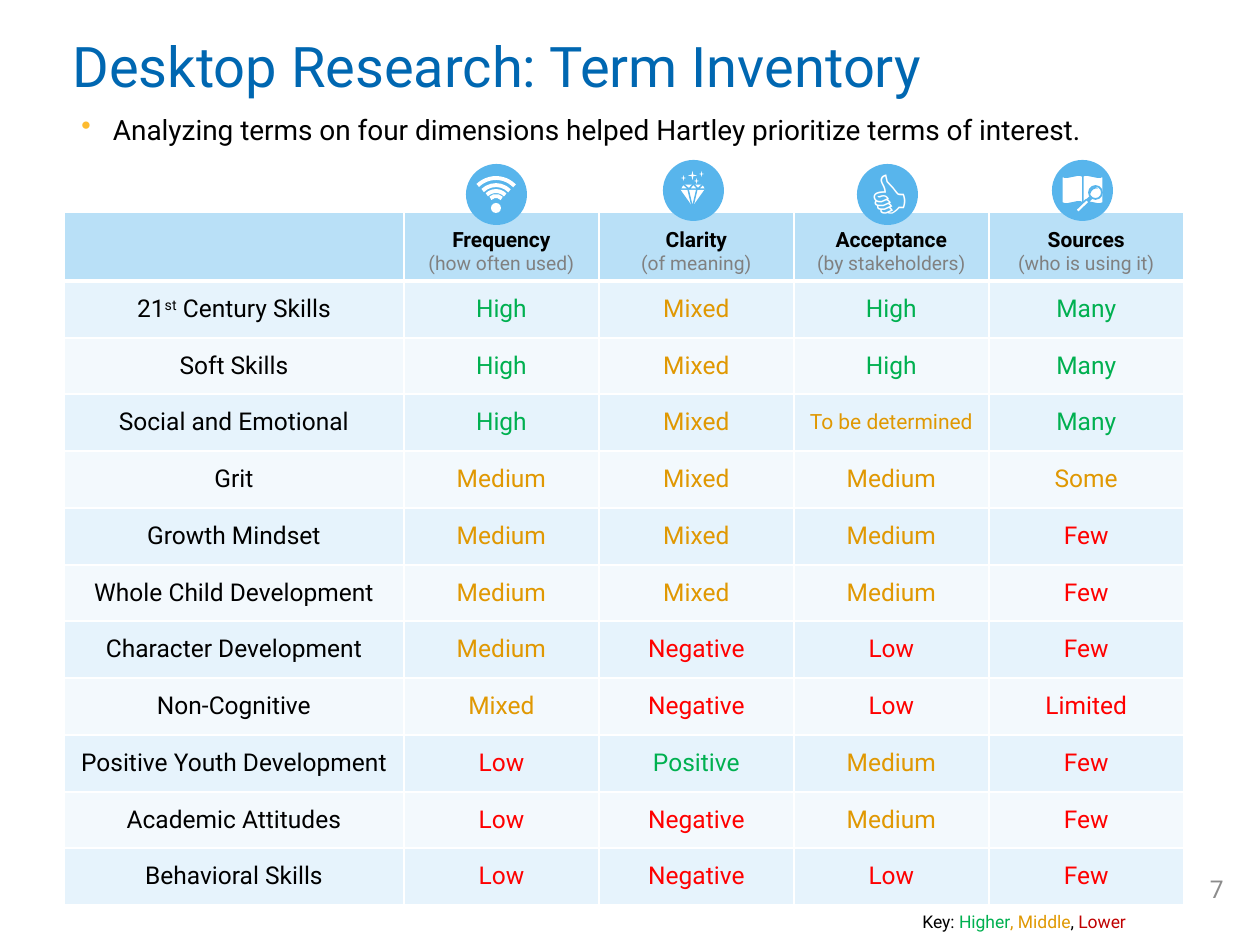
from dataclasses import dataclass

from lxml import etree
from pptx import Presentation
from pptx.dml.color import RGBColor
from pptx.enum.shapes import MSO_SHAPE
from pptx.enum.text import MSO_ANCHOR, PP_ALIGN
from pptx.oxml.ns import qn
from pptx.util import Pt

PX = 914400 / 126
LEFT, CENTER, RIGHT = PP_ALIGN.LEFT, PP_ALIGN.CENTER, PP_ALIGN.RIGHT
TOP, MIDDLE, BOTTOM = MSO_ANCHOR.TOP, MSO_ANCHOR.MIDDLE, MSO_ANCHOR.BOTTOM
OVAL, ARC, RECT = MSO_SHAPE.OVAL, MSO_SHAPE.ARC, MSO_SHAPE.RECTANGLE
TRIANGLE, TRAPEZOID = MSO_SHAPE.ISOSCELES_TRIANGLE, MSO_SHAPE.TRAPEZOID
STAR, WAVE, MOON = MSO_SHAPE.STAR_4_POINT, MSO_SHAPE.WAVE, MSO_SHAPE.MOON
ROUND_RECT = MSO_SHAPE.ROUNDED_RECTANGLE


@dataclass(frozen=True)
class Theme:
    font: str = "Roboto"
    symbol_font: str = "Arial"
    title: str = "0067B1"
    text: str = "000000"
    muted: str = "808080"
    page: str = "8C8C8C"
    bullet: str = "FDBB30"
    icon: str = "58B5EC"
    white: str = "FFFFFF"
    header: str = "B9E0F7"
    bands: tuple = ("E6F3FC", "F3F9FD")
    high: str = "00B050"
    middle: str = "E09802"
    low: str = "FF0000"
    key_low: str = "C00000"
    title_size: int = 32
    symbol_size: int = 36
    lead_size: int = 16
    body_size: int = 14
    small_size: int = 12
    note_size: int = 11
    key_size: int = 10


T = Theme()
HEADERS = [("Frequency", "(how often used)"), ("Clarity", "(of meaning)"),
           ("Acceptance", "(by stakeholders)"), ("Sources", "(who is using it)")]
TERMS = [
    ("21st Century Skills", "High", "Mixed", "High", "Many"),
    ("Soft Skills", "High", "Mixed", "High", "Many"),
    ("Social and Emotional", "High", "Mixed", "To be determined", "Many"),
    ("Grit", "Medium", "Mixed", "Medium", "Some"),
    ("Growth Mindset", "Medium", "Mixed", "Medium", "Few"),
    ("Whole Child Development", "Medium", "Mixed", "Medium", "Few"),
    ("Character Development", "Medium", "Negative", "Low", "Few"),
    ("Non-Cognitive", "Mixed", "Negative", "Low", "Limited"),
    ("Positive Youth Development", "Low", "Positive", "Medium", "Few"),
    ("Academic Attitudes", "Low", "Negative", "Medium", "Few"),
    ("Behavioral Skills", "Low", "Negative", "Low", "Few"),
]
RATING = {**dict.fromkeys(("High", "Many", "Positive"), T.high),
          **dict.fromkeys(("Low", "Few", "Negative", "Limited"), T.low)}


def px(n):
    return round(n * PX)


def rgb(color):
    return RGBColor.from_string(color)


class Canvas:
    """Draws on the current slide, or inside the group opened last."""

    def __init__(self, s, theme):
        self.s, self.theme, self.shapes = s, theme, s.shapes

    def open_group(self):
        self.shapes = self.s.shapes.add_group_shape().shapes

    def close_group(self):
        self.shapes = self.s.shapes

    def run(self, p, text, size, color, bold=False, font=None, raised=False):
        r = p.add_run()
        r.text = text
        r.font.name, r.font.size, r.font.bold = font or self.theme.font, Pt(size), bold
        r.font.color.rgb = rgb(color)
        if raised:
            r.font._element.set("baseline", "30000")

    def text(self, x, y, w, h, runs, align=LEFT, anchor=TOP, wrap=True, bullet=False):
        tf = self.shapes.add_textbox(px(x), px(y), px(w), px(h)).text_frame
        tf.word_wrap, tf.vertical_anchor = wrap, anchor
        p = tf.paragraphs[0]
        p.alignment = align
        if bullet:
            self.bullet(p)
        for args in runs:
            self.run(p, *args)

    def bullet(self, p):
        pPr = p._p.get_or_add_pPr()
        pPr.set("marL", "228600")
        pPr.set("indent", "-228600")
        clr = etree.SubElement(pPr, qn("a:buClr"))
        etree.SubElement(clr, qn("a:srgbClr"), val=self.theme.bullet)
        etree.SubElement(pPr, qn("a:buChar"), char="•")

    def paint(self, sp, fill, line, width):
        sp.shadow.inherit = False
        if fill:
            sp.fill.solid()
            sp.fill.fore_color.rgb = rgb(fill)
        else:
            sp.fill.background()
        if line:
            sp.line.color.rgb, sp.line.width = rgb(line), Pt(width)
        else:
            sp.line.fill.background()

    def shape(self, kind, x, y, w, h, fill=None, line=None, width=0.85,
              rotation=0, flip=None, adjust=()):
        sp = self.shapes.add_shape(kind, px(x), px(y), px(w), px(h))
        self.paint(sp, fill, line, width)
        sp.rotation = rotation
        for i, value in enumerate(adjust):
            sp.adjustments[i] = value
        if flip:
            sp._element.spPr.find(qn("a:xfrm")).set(flip, "1")

    def polygon(self, points, fill, line, width=0.85):
        fb = self.shapes.build_freeform(*points[0], scale=PX)
        fb.add_line_segments(points[1:], close=True)
        self.paint(fb.convert_to_shape(), fill, line, width)

    def table(self, x, y, widths, heights):
        tbl = self.shapes.add_table(len(heights), len(widths), px(x), px(y),
                                    px(sum(widths)), px(sum(heights))).table
        tbl.first_row = tbl.horz_banding = False
        for col, w in zip(tbl.columns, widths):
            col.width = px(w)
        for row, h in zip(tbl.rows, heights):
            row.height = px(h)
        return tbl

    def cell(self, cell, fill, anchor=MIDDLE, top=1, bottom=1):
        """Style a cell and return its centred paragraph."""
        cell.fill.solid()
        cell.fill.fore_color.rgb = rgb(fill)
        cell.vertical_anchor = anchor
        tcPr = cell._tc.get_or_add_tcPr()
        for i, (side, width) in enumerate(zip("LRTB", (1, 1, top, bottom))):
            ln = etree.Element(qn(f"a:ln{side}"), w=str(Pt(width)))
            solid = etree.SubElement(ln, qn("a:solidFill"))
            etree.SubElement(solid, qn("a:srgbClr"), val=self.theme.white)
            tcPr.insert(i, ln)
        p = cell.text_frame.paragraphs[0]
        p.alignment = CENTER
        return p


def term_table(c):
    body, n = 624, len(TERMS)
    edges = [round(i * body / n) for i in range(n + 1)]
    heights = [69] + [b - a for a, b in zip(edges, edges[1:])]
    tbl = c.table(64, 212, [340] + [195] * 4, heights)
    c.cell(tbl.cell(0, 0), T.header, bottom=3)
    for col, (name, note) in enumerate(HEADERS, 1):
        p = c.cell(tbl.cell(0, col), T.header, BOTTOM, bottom=3)
        c.run(p, name, T.small_size, T.text, True)
        p.add_line_break()
        c.run(p, note, T.note_size, T.muted)
    for row, (term, *ratings) in enumerate(TERMS, 1):
        fill, top = T.bands[(row - 1) % 2], 3 if row == 1 else 1
        p = c.cell(tbl.cell(row, 0), fill, top=top)
        number, suffix, rest = term.partition("st ")
        if suffix:
            c.run(p, number, T.body_size, T.text)
            c.run(p, "st", T.body_size, T.text, raised=True)
            c.run(p, " " + rest, T.body_size, T.text)
        else:
            c.run(p, term, T.body_size, T.text)
        for col, rating in enumerate(ratings, 1):
            size = T.small_size if rating == "To be determined" else T.body_size
            c.run(c.cell(tbl.cell(row, col), fill, top=top), rating, size,
                  RATING.get(rating, T.middle))


def signal_icon(c):
    c.shape(OVAL, 491, 203, 10, 10, T.white)
    for radius in (8, 13, 19, 26):
        c.shape(ARC, 496 - radius, 204 - radius, 2 * radius, 2 * radius,
                line=T.white, width=2.25, rotation=315.7)


def gem_icon(c):
    facet = {"fill": T.white, "line": T.icon}
    c.shape(TRIANGLE, 679, 189, 27, 19, flip="flipV", **facet)
    c.shape(TRAPEZOID, 680, 184, 26, 5, adjust=[0.52], **facet)
    c.shape(TRIANGLE, 688, 189, 9, 19, flip="flipV", **facet)
    c.shape(TRIANGLE, 689, 184, 9, 5, **facet)
    c.polygon([(683, 184), (680, 189), (689, 189)], **facet)
    c.polygon([(703, 184), (706, 189), (698, 189)], **facet)
    for x, y, w, h in ((681, 175, 5, 6), (688, 171, 9, 9), (694, 178, 5, 6), (699, 171, 5, 6)):
        c.shape(STAR, x, y, w, h, T.white)


def thumb_icon(c):
    c.text(856, 152, 68, 89, [("👍", T.symbol_size, T.white, False, T.symbol_font)], wrap=False)


def book_icon(c):
    for x, flip in ((1082, None), (1062, "flipH")):
        c.shape(WAVE, x, 175, 21, 29, T.white, T.icon, flip=flip, adjust=[0.04, 0])
    c.shape(OVAL, 1089, 186, 13, 13, line=T.icon, width=1)
    c.shape(RECT, 1087, 197, 4, 5, T.icon, rotation=44.6)
    c.shape(ROUND_RECT, 1075, 204, 15, 4, T.white, T.icon, rotation=316.1)
    c.shape(MOON, 1091, 185, 4, 9, T.icon, rotation=54.5)


def main():
    prs = Presentation()
    prs.slide_width, prs.slide_height = px(1260), px(945)
    c = Canvas(prs.slides.add_slide(prs.slide_layouts[6]), T)
    c.text(1143, 864, 93, 50, [("7", T.body_size, T.page)], RIGHT, MIDDLE)
    c.text(60, 25, 919, 81, [("Desktop Research: Term Inventory", T.title_size, T.title)])
    term_table(c)
    for x, y, draw in ((466, 164, signal_icon), (663, 160, gem_icon),
                       (857, 164, thumb_icon), (1052, 160, book_icon)):
        c.open_group()
        c.shape(OVAL, x, y, 61, 61, T.icon)
        draw(c)
    c.close_group()
    key = [("Key: ", T.text), ("Higher", T.high), (", Middle", T.middle),
           (", ", T.text), ("Lower", T.key_low)]
    c.text(910, 905, 233, 34, [(text, T.key_size, color) for text, color in key], wrap=False)
    c.text(69, 106, 1166, 145,
           [("Analyzing terms on four dimensions helped Hartley prioritize terms of interest.",
             T.lead_size, T.text)], bullet=True)
    prs.save("out.pptx")


if __name__ == "__main__":
    main()
